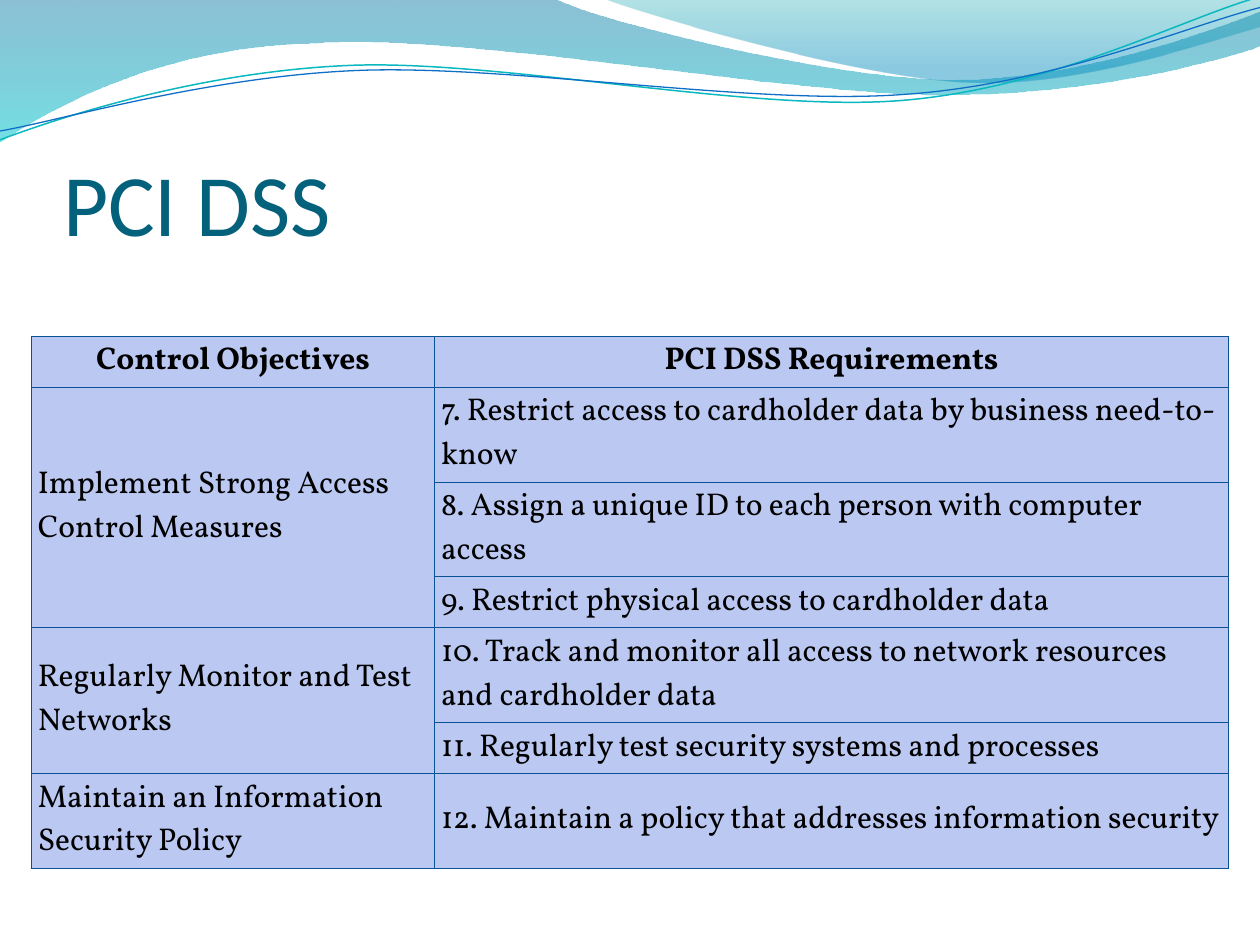
"""Build the PCI DSS slide: wave header, title and a table of control objectives."""
from lxml.etree import SubElement, fromstring
from pptx import Presentation
from pptx.dml.color import RGBColor
from pptx.enum.text import MSO_ANCHOR, MSO_AUTO_SIZE, PP_ALIGN
from pptx.oxml.ns import qn
from pptx.util import Inches, Pt

TITLE = "PCI DSS"
HEADINGS = ("Control Objectives", "PCI DSS Requirements")
OBJECTIVES = [
    ("Implement Strong Access Control Measures", [
        "7. Restrict access to cardholder data by business need-to-know",
        "8. Assign a unique ID to each person with computer access",
        "9. Restrict physical access to cardholder data"]),
    ("Regularly Monitor and Test Networks", [
        "10. Track and monitor all access to network resources and cardholder data",
        "11. Regularly test security systems and processes"]),
    ("Maintain an Information Security Policy", [
        "12. Maintain a policy that addresses information security"]),
]
COLUMN_WIDTHS = (3.2, 6.3)
HEADER_HEIGHT, ROW_HEIGHT = 0.22, 0.38
CELL_FILL, BORDER = "BAC8F2", "095295"
CELL_FORMAT = {"vertical_anchor": MSO_ANCHOR.MIDDLE,
               "margin_left": Inches(0.05), "margin_right": Inches(0.05),
               "margin_top": Pt(2), "margin_bottom": Pt(2)}
TITLE_BOX = {"left": Inches(0.5), "top": Inches(0.77),
             "width": Inches(9), "height": Inches(1.25)}
TITLE_FRAME = {"margin_left": 0, "margin_right": 0, "margin_top": Inches(0.05),
               "margin_bottom": 0, "vertical_anchor": MSO_ANCHOR.BOTTOM,
               "auto_size": MSO_AUTO_SIZE.NONE, "word_wrap": True}

BANDS = [
    ([(0, 0), (4.4, -0.01),
      (4.76, 0.17, 6.64, 0.63, 7.58, 0.63), (8.53, 0.63, 9.58, 0.26, 10, 0.09),
      (10.01, 0.36),
      (9.83, 0.44, 8.7, 0.76, 7.46, 0.75), (6.22, 0.75, 3.82, 0.28, 2.57, 0.34),
      (1.29, 0.36, 0.46, 0.83, -0.01, 1.13)],
     [(0, "0074A1", 45), (1, "00C6CF", 55)]),
    ([(4.79, -0.01),
      (5.09, 0.11, 6.82, 0.62, 7.69, 0.65), (8.56, 0.69, 9.61, 0.32, 10, 0.21),
      (10, 0)],
     [(0, "00A1A9", 30), (0.8, "008BBF", 45)]),
]
STRANDS = [
    ([(0, 1.11), (0.48, 0.93, 1.58, 0.57, 2.77, 0.52),
      (3.95, 0.47, 5.93, 0.89, 7.13, 0.8), (8.33, 0.71, 9.38, 0.15, 9.98, -0.02)],
     "0AB8BF", 0.85),
    ([(0, 1.04), (0.47, 0.96, 1.64, 0.61, 2.83, 0.56),
      (4.03, 0.51, 5.97, 0.84, 7.17, 0.75), (8.36, 0.67, 9.41, 0.21, 10, 0.06)],
     "0F6FC6", 0.75),
]


def rgb(hex_color):
    return RGBColor.from_string(hex_color)


def apply(target, formats):
    for name, value in formats.items():
        setattr(target, name, value)


def add_outline(slide, segments, close):
    anchors = [(Inches(s[-2]), Inches(s[-1])) for s in segments]
    builder = slide.shapes.build_freeform(*anchors[0], scale=1.0)
    builder.add_line_segments(anchors[1:], close=close)
    outline = builder.convert_to_shape()
    outline.shadow.inherit = False
    edges = list(outline._element.spPr.iter(qn("a:lnTo")))
    for edge, segment in zip(edges, segments[1:]):
        if len(segment) == 6:
            edge.tag = qn("a:cubicBezTo")
            for index in (0, 1):
                x, y = segment[2 * index:2 * index + 2]
                control = edge.makeelement(qn("a:pt"), {
                    "x": str(Inches(x) - outline.left), "y": str(Inches(y) - outline.top)})
                edge.insert(index, control)
    return outline


def add_band(slide, segments, stops):
    band = add_outline(slide, segments, True)
    band.line.fill.background()
    band.fill.gradient()
    band.fill.gradient_angle = 270
    for stop, (position, color, _) in zip(band.fill.gradient_stops, stops):
        stop.position = position
        stop.color.rgb = rgb(color)
    for color, (_, _, opacity) in zip(band._element.spPr.iter(qn("a:srgbClr")), stops):
        SubElement(color, qn("a:alpha"), val=str(opacity * 1000))


def add_strand(slide, segments, color, width):
    strand = add_outline(slide, segments, False)
    strand.fill.background()
    strand.line.color.rgb = rgb(color)
    strand.line.width = Pt(width)


def style_text(paragraph, size, font, color, bold=False, align=PP_ALIGN.LEFT):
    paragraph.alignment = align
    apply(paragraph.font, {"size": Pt(size), "name": font, "bold": bold})
    paragraph.font.color.rgb = rgb(color)


def add_title(slide):
    title = slide.shapes.title
    apply(title, TITLE_BOX)
    title.text_frame.text = TITLE
    apply(title.text_frame, TITLE_FRAME)
    style_text(title.text_frame.paragraphs[0], 50, "Calibri", "04617B")
    slide.shapes._spTree.append(title._element)


def style_cell(cell, is_heading):
    apply(cell, CELL_FORMAT)
    style_text(cell.text_frame.paragraphs[0], 18, "Vollkorn", "000000", is_heading,
               PP_ALIGN.CENTER if is_heading else PP_ALIGN.LEFT)
    cell.fill.solid()
    cell.fill.fore_color.rgb = rgb(CELL_FILL)
    for index, side in enumerate(("lnL", "lnR", "lnT", "lnB")):
        cell._tc.get_or_add_tcPr().insert(index, fromstring(
            f'<a:{side} xmlns:a="http://schemas.openxmlformats.org/drawingml/2006/main" '
            f'w="{Pt(0.75)}"><a:solidFill><a:srgbClr val="{BORDER}"/></a:solidFill></a:{side}>'))


def add_objectives(slide):
    count = sum(len(requirements) for _, requirements in OBJECTIVES)
    table = slide.shapes.add_table(
        count + 1, 2, Inches(0.25), Inches(2.67), Inches(sum(COLUMN_WIDTHS)),
        Inches(HEADER_HEIGHT + count * ROW_HEIGHT)).table
    for column, width in zip(table.columns, COLUMN_WIDTHS):
        column.width = Inches(width)
    for index, row in enumerate(table.rows):
        row.height = Inches(ROW_HEIGHT if index else HEADER_HEIGHT)
    for column, heading in enumerate(HEADINGS):
        table.cell(0, column).text = heading
    first = 1
    for objective, requirements in OBJECTIVES:
        last = first + len(requirements) - 1
        table.cell(first, 0).text = objective
        for offset, requirement in enumerate(requirements):
            table.cell(first + offset, 1).text = requirement
        if last > first:
            table.cell(first, 0).merge(table.cell(last, 0))
        first = last + 1
    for index, row in enumerate(table.rows):
        for cell in row.cells:
            style_cell(cell, index == 0)


def main():
    deck = Presentation()
    deck.slide_width, deck.slide_height = Inches(10), Inches(7.5)
    slide = deck.slides.add_slide(deck.slide_layouts[5])
    for band in BANDS:
        add_band(slide, *band)
    for strand in STRANDS:
        add_strand(slide, *strand)
    add_title(slide)
    add_objectives(slide)
    deck.save("out.pptx")


if __name__ == "__main__":
    main()
